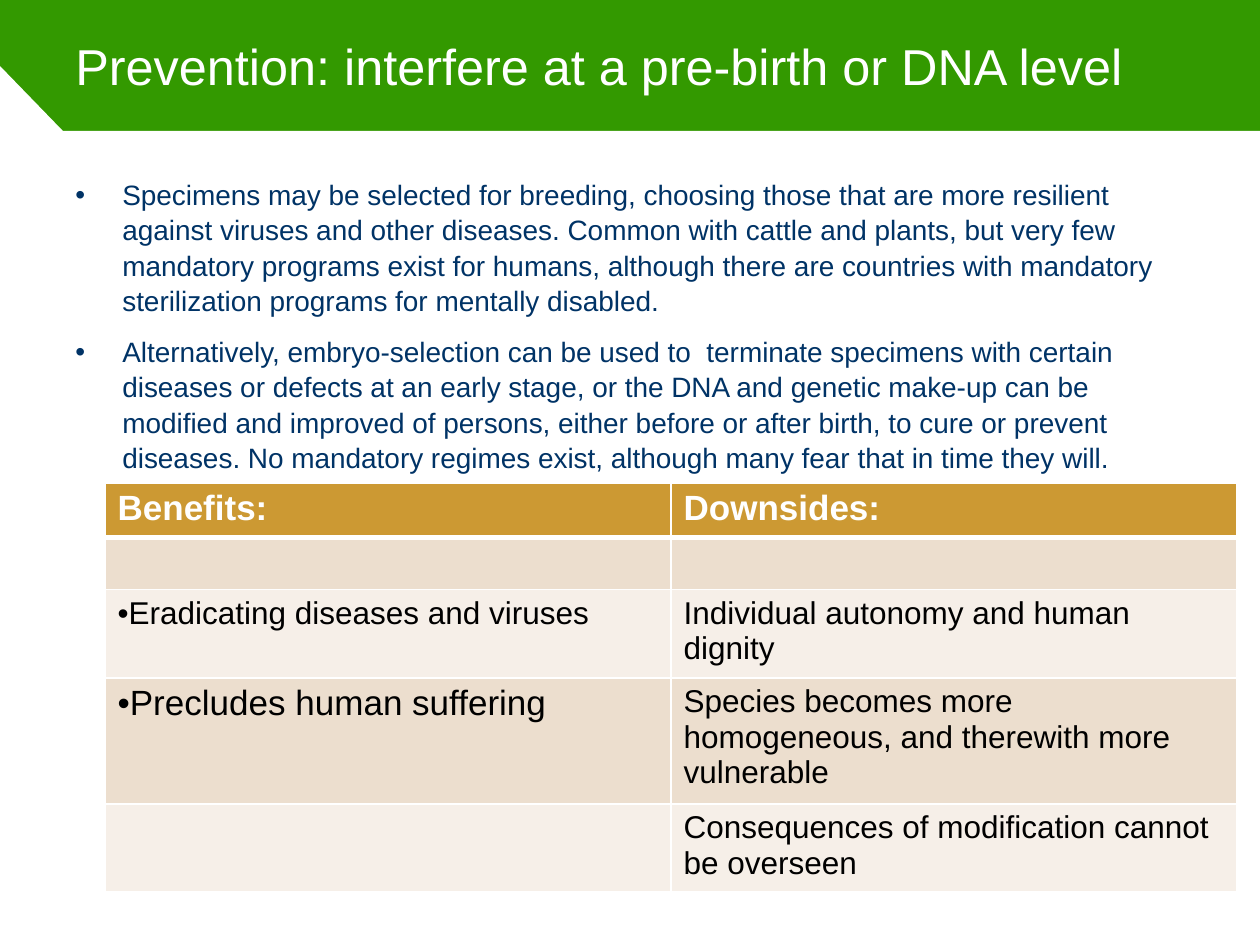
from dataclasses import dataclass

from lxml.etree import SubElement
from pptx import Presentation
from pptx.dml.color import RGBColor
from pptx.enum.text import MSO_ANCHOR
from pptx.oxml.ns import qn
from pptx.util import Pt

SCALE = 914400 // 126


@dataclass(frozen=True)
class Theme:
    """Colours, font and type sizes."""
    face: str = "Arial"
    green: str = "339900"
    white: str = "FFFFFF"
    navy: str = "003366"
    black: str = "000000"
    gold: str = "CC9933"
    bands: tuple = ("ECDECE", "F6EFE8")
    title: float = 28.8
    body: int = 16
    cell: int = 18
    head: int = 20


THEME = Theme()
TITLE = "Prevention: interfere at a pre-birth or DNA level"
POINTS = (
    "Specimens may be selected for breeding, choosing those that are more "
    "resilient against viruses and other diseases. Common with cattle and "
    "plants, but very few mandatory programs exist for humans, although there "
    "are countries with mandatory sterilization programs for mentally disabled.",
    "Alternatively, embryo-selection can be used to  terminate specimens with "
    "certain diseases or defects at an early stage, or the DNA and genetic "
    "make-up can be modified and improved of persons, either before or after "
    "birth, to cure or prevent diseases. No mandatory regimes exist, although "
    "many fear that in time they will.",
)
ROWS = (
    (51, "Benefits:", "Downsides:"),
    (52, "", ""),
    (83, "Eradicating diseases and viruses", "Individual autonomy and human dignity"),
    (118, "Precludes human suffering",
     "Species becomes more homogeneous, and therewith more vulnerable"),
    (84, "", "Consequences of modification cannot be overseen"),
)
BIG = {(0, 0), (0, 1), (3, 0)}


def px(num):
    """Turn px into EMU."""
    return num * SCALE


def paint(fill, tone):
    """Set a solid fill."""
    fill.solid()
    fill.fore_color.rgb = RGBColor.from_string(tone)


def style(para, size, tone, bold=False):
    """Format the runs of a paragraph."""
    for run in para.runs:
        font = run.font
        font.name, font.size, font.bold = THEME.face, Pt(size), bold
        font.color.rgb = RGBColor.from_string(tone)


def bullet(para, hang=0):
    """Give a paragraph a bullet with a hanging indent."""
    props = para._p.get_or_add_pPr()
    props.set("marL", str(px(hang)))
    props.set("indent", str(-px(hang)))
    SubElement(props, qn("a:buFont")).set("typeface", THEME.face)
    SubElement(props, qn("a:buChar")).set("char", "•")


def panel(slide):
    """Draw the white page below the green banner."""
    pen = slide.shapes.build_freeform(63, 131, scale=SCALE)
    pen.add_line_segments([(0, 66), (0, 945), (1260, 945), (1260, 131)])
    shape = pen.convert_to_shape()
    shape.shadow.inherit = False
    paint(shape.fill, THEME.white)
    shape.line.fill.background()


def frame(slide, *box):
    """Add a wrapping text box and return its text frame."""
    text = slide.shapes.add_textbox(*map(px, box)).text_frame
    text.word_wrap = True
    return text


def title(slide):
    """Write the title in the banner."""
    text = frame(slide, 63, 0, 1134, 131)
    text.vertical_anchor = MSO_ANCHOR.MIDDLE
    text.text = TITLE
    style(text.paragraphs[0], THEME.title, THEME.white)


def body(slide):
    """Write the bulleted points."""
    text = frame(slide, 63, 170, 1134, 645)
    text.text = "\n".join(POINTS)
    for i, para in enumerate(text.paragraphs):
        para.line_spacing = 1.05
        para.space_before = Pt(3.2 if i else 0)
        para.space_after = Pt(6)
        bullet(para, 47)
        style(para, THEME.body, THEME.navy)


def edges(cell, top, base):
    """Draw white borders round a cell, widths in points."""
    props = cell._tc.get_or_add_tcPr()
    for side, width in zip("LRTB", (1, 1, top, base)):
        line = SubElement(props, qn(f"a:ln{side}"), w=str(Pt(width)))
        fill = SubElement(line, qn("a:solidFill"))
        SubElement(fill, qn("a:srgbClr"), val=THEME.white)


def entry(cell, row, col, words):
    """Fill and format one table cell."""
    head = row == 0
    edges(cell, 3 if row == 1 else 1, 3 if head else 1)
    paint(cell.fill, THEME.gold if head else THEME.bands[(row - 1) % 2])
    if not words:
        return
    cell.text = words
    para = cell.text_frame.paragraphs[0]
    if col == 0 and not head:
        bullet(para)
    size = THEME.head if (row, col) in BIG else THEME.cell
    style(para, size, THEME.white if head else THEME.black, head)


def grid(slide):
    """Build the table of benefits and downsides."""
    high = sum(row[0] for row in ROWS)
    box = map(px, (105, 483, 1132, high))
    table = slide.shapes.add_table(len(ROWS), 2, *box).table
    for i, (tall, *texts) in enumerate(ROWS):
        table.rows[i].height = px(tall)
        for j, words in enumerate(texts):
            entry(table.cell(i, j), i, j, words)


def main():
    """Build and save the slide."""
    deck = Presentation()
    deck.slide_width, deck.slide_height = px(1260), px(945)
    slide = deck.slides.add_slide(deck.slide_layouts[6])
    paint(slide.background.fill, THEME.green)
    panel(slide)
    title(slide)
    body(slide)
    grid(slide)
    deck.save("out.pptx")


if __name__ == "__main__":
    main()
